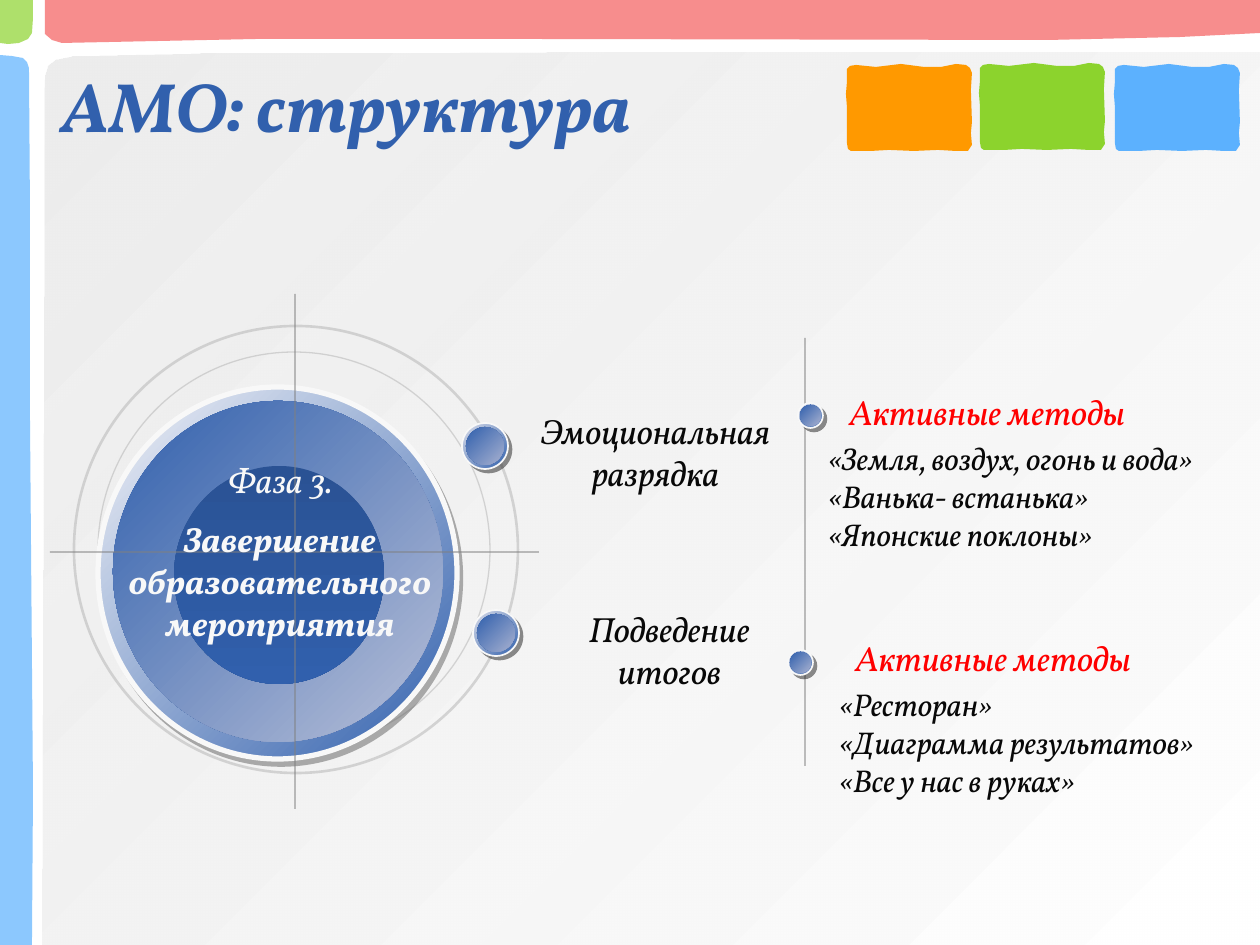
from dataclasses import dataclass

from lxml import etree
from pptx import Presentation
from pptx import util as u
from pptx.dml.color import RGBColor
from pptx.enum import shapes, text
from pptx.oxml.ns import qn

PX = 7257  # EMU in one px, at 126 px to the inch


@dataclass(frozen=True)
class Theme:
    font: str = "Vollkorn"
    blue: str = "3160AD"
    deep: str = "2A5294"
    ice: str = "F3F4F8"
    mist: str = "B8C0D8"
    bead_rim: str = "DDE0EB"
    bead_glow: str = "A7B1D0"
    pale: str = "F8F8F8"
    ink: str = "080808"
    red: str = "FF0000"
    axis: str = "808080"
    orbit: str = "B2B2B2"
    shade: str = "5F5F5F"
    bead_shade: str = "1C1C1C"
    panel: tuple = ("E6E6E6", "FFFFFF")
    pink: str = "F45E5E"
    sky: str = "5CB1FE"
    green: str = "8CD32D"
    orange: str = "FF9900"
    title: int = 40
    label: int = 20
    item: int = 18


T = Theme()

# Outlines in px
PANEL = [(1260, 945), (1260, 53), (958, 53), (546, 53), (200, 54), (72, 57),
         (56, 60), (48, 66), (45, 76), (44, 92), (44, 229), (43, 638), (42, 945)]
TOP_BAND = [(1260, 0), (1260, 33), (1180, 37), (1048, 40), (537, 39), (256, 39),
            (62, 43), (52, 40), (45, 34), (45, 0)]
SIDE_BAND = [(0, 945), (32, 945), (33, 791), (30, 416), (30, 210), (29, 68),
             (27, 62), (23, 58), (12, 56), (0, 55)]
CORNER = [(0, 0), (33, 0), (33, 18), (32, 33), (28, 39), (19, 43), (8, 44), (0, 43)]
TILE = [(1, 5), (4, 2), (10, 1), (30, 3), (55, 0), (78, 3), (95, 3), (110, 0),
        (120, 1), (124, 4), (126, 9), (125, 26), (126, 58), (125, 69), (126, 81),
        (122, 87), (110, 87), (92, 86), (68, 87), (43, 86), (25, 87), (5, 87),
        (2, 85), (1, 79), (1, 43), (0, 30), (1, 18)]


def px(*lengths):
    return [length * PX for length in lengths]


def rgb(color):
    return RGBColor.from_string(color)


def fade(element, percent):
    """Make the first colour inside an element translucent."""
    color = next(element.iter(qn("a:srgbClr")))
    etree.SubElement(color, qn("a:alpha"), val=str(percent * 1000))


def cast_shadow(effects, color, distance, angle):
    shadow = etree.SubElement(effects, qn("a:outerShdw"), blurRad="0",
                              dist=str(u.Pt(distance)), dir=str(angle * 60000),
                              algn="ctr", rotWithShape="0")
    etree.SubElement(shadow, qn("a:srgbClr"), val=color)
    fade(shadow, 50)


def paint(shape, fill=None, angle=45, alpha=None):
    """Fill with one colour, with a pair as a gradient, or with nothing."""
    shape.shadow.inherit = False
    if fill is None:
        shape.fill.background()
    elif isinstance(fill, tuple):
        shape.fill.gradient()
        shape.fill.gradient_angle = 360 - angle
        for stop, color in zip(shape.fill.gradient_stops, fill):
            stop.color.rgb = rgb(color)
    else:
        shape.fill.solid()
        shape.fill.fore_color.rgb = rgb(fill)
    if alpha:
        fade(shape._element.spPr, alpha)


def stroke(shape, color, width, alpha=None):
    shape.line.color.rgb = rgb(color)
    shape.line.width = u.Pt(width)
    if alpha:
        fade(shape._element.spPr.find(qn("a:ln")), alpha)


def add_patch(page, points, fill, left=0, top=0, alpha=None):
    moved = [(x + left, y + top) for x, y in points]
    builder = page.shapes.build_freeform(*moved[0], scale=PX)
    builder.add_line_segments(moved[1:], close=True)
    patch = builder.convert_to_shape()
    paint(patch, fill, alpha=alpha)
    patch.line.fill.background()


def add_disc(page, left, top, width, height, fill=None, angle=45, edge=None, shadow=None):
    disc = page.shapes.add_shape(shapes.MSO_SHAPE.OVAL, *px(left, top, width, height))
    paint(disc, fill, angle)
    if edge:
        stroke(disc, *edge)
    else:
        disc.line.fill.background()
    if shadow:
        cast_shadow(disc._element.spPr.find(qn("a:effectLst")), *shadow)


def add_bead(page, left, top, size):
    add_disc(page, left, top, size, size, (T.bead_rim, T.blue), edge=(T.pale, 1),
             shadow=(T.bead_shade, 2.8, 45))
    inset = round(size * 0.08)
    core = size - 2 * inset
    add_disc(page, left + inset, top + inset, core, core, (T.blue, T.bead_glow))


def add_axis(page, *ends):
    axis = page.shapes.add_connector(shapes.MSO_CONNECTOR.STRAIGHT, *px(*ends))
    stroke(axis, T.axis, 1, 50)
    etree.SubElement(axis._element.spPr, qn("a:effectLst"))


def add_text(page, left, top, width, height, lines, size, color, bold=(), center=False,
             middle=False, gap=0, shadow=False):
    """Write one paragraph a line; bold holds the numbers of the bold ones."""
    box = page.shapes.add_textbox(*px(left, top, width, height))
    frame = box.text_frame
    frame.word_wrap = True
    if middle:
        frame.vertical_anchor = text.MSO_ANCHOR.MIDDLE
    for number, line in enumerate(lines):
        para = frame.add_paragraph() if number else frame.paragraphs[0]
        if center:
            para.alignment = text.PP_ALIGN.CENTER
        if number and gap:
            para.space_before = u.Pt(gap)
        span = para.add_run()
        span.text = line
        span.font.size = u.Pt(size)
        span.font.italic = True
        span.font.bold = number in bold
        span.font.color.rgb = rgb(color)
        if shadow:
            effects = etree.Element(qn("a:effectLst"))
            span._r.rPr.find(qn("a:solidFill")).addnext(effects)
            cast_shadow(effects, "000000", 2, 45)
        span.font.name = T.font


def main():
    deck = Presentation()
    deck.slide_width, deck.slide_height = px(1260, 945)
    page = deck.slides.add_slide(deck.slide_layouts[6])

    # Backdrop and frame
    add_patch(page, PANEL, T.panel, alpha=70)
    for outline, color in ((TOP_BAND, T.pink), (SIDE_BAND, T.sky), (CORNER, T.green)):
        add_patch(page, outline, color, alpha=70)
    for left, top, color in ((846, 64, T.orange), (1114, 64, T.sky), (979, 63, T.green)):
        add_patch(page, TILE, color, left, top)

    add_text(page, 49, 39, 801, 130, ["АМО: структура"], T.title, T.blue,
             bold=(0,), middle=True)

    # Methods on the right
    add_axis(page, 805, 338, 805, 766)
    for left, top in ((837, 384), (843, 630)):
        add_text(page, left, top, 357, 55, ["Активные методы"], T.label, T.red)
    add_text(page, 816, 433, 444, 152,
             ["«Земля, воздух, огонь и вода»", "«Ванька- встанька»", "«Японские поклоны»"],
             T.item, T.ink)
    add_text(page, 827, 679, 433, 127,
             ["«Ресторан»", "«Диаграмма результатов»", "«Все у нас в руках»"],
             T.item, T.ink)

    # Phase disc with orbits and axes
    add_disc(page, 98, 352, 392, 396, edge=(T.orbit, 0.75, 50))
    add_disc(page, 98, 387, 359, 372, (T.ice, T.blue), edge=(T.pale, 3),
             shadow=(T.shade, 3.6, 56))
    add_disc(page, 113, 401, 330, 341, (T.blue, T.mist))
    add_disc(page, 174, 466, 210, 218, (T.deep, T.blue), angle=90)
    add_disc(page, 74, 326, 444, 447, edge=(T.orbit, 1.5, 50))
    add_axis(page, 50, 552, 539, 552)
    add_axis(page, 295, 294, 295, 809)

    # Labels of the phase and its two steps
    add_text(page, 512, 403, 287, 97, ["Эмоциональная разрядка"], T.label, T.ink, center=True)
    add_text(page, 526, 601, 287, 97, ["Подведение итогов"], T.label, T.ink, center=True)
    add_text(page, 98, 452, 364, 204,
             ["Фаза 3.", "Завершение образовательного мероприятия"],
             T.label, T.pale, bold=(1,), center=True, gap=10, shadow=True)

    # Beads on the orbit and on the methods axis
    for bead in ((462, 423, 46), (473, 610, 46), (798, 403, 25), (788, 650, 25)):
        add_bead(page, *bead)

    deck.save("out.pptx")


if __name__ == "__main__":
    main()
